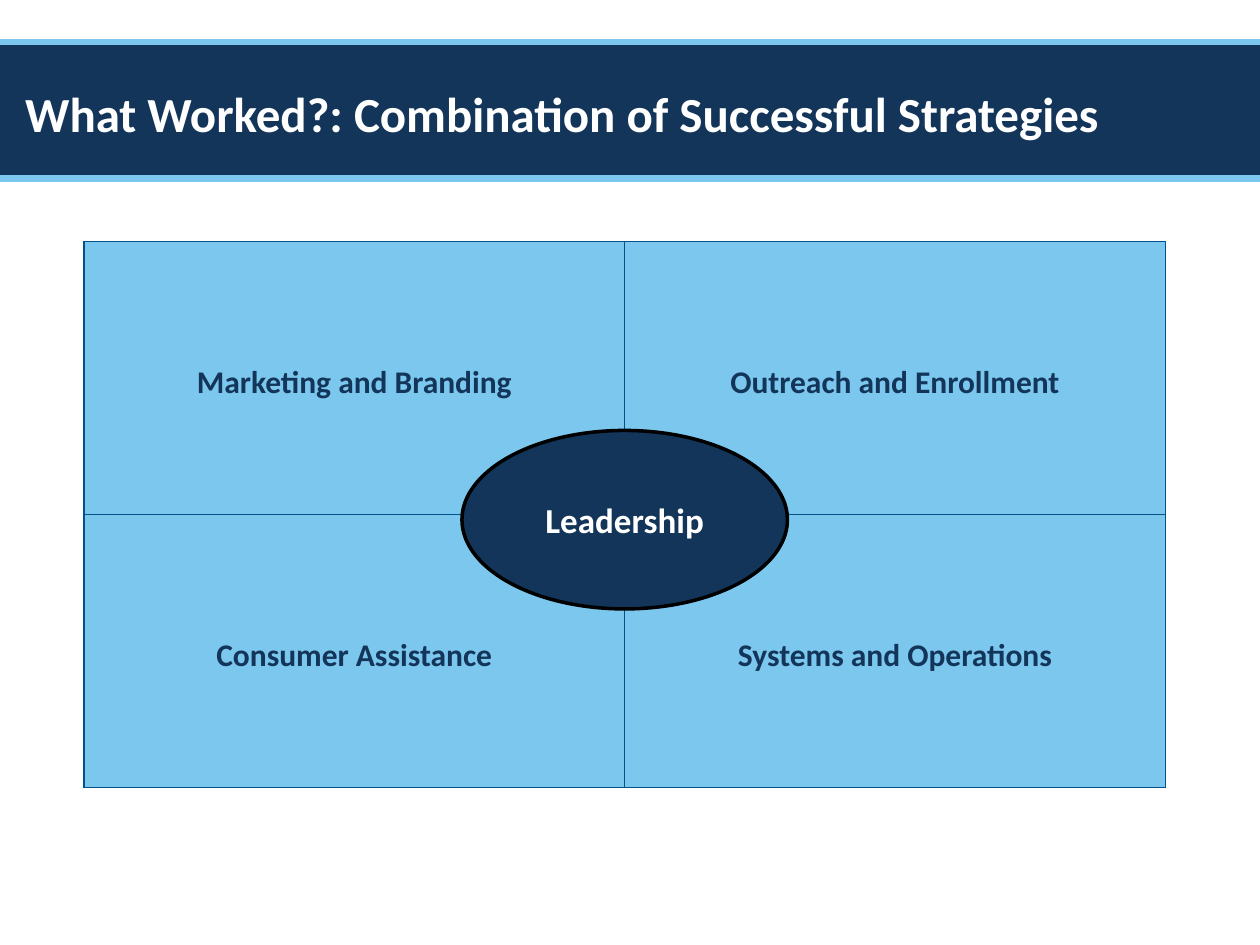
"""Build the slide on the combination of successful strategies."""
from lxml import etree
from pptx import Presentation
from pptx.dml.color import RGBColor
from pptx.enum.shapes import MSO_CONNECTOR, MSO_SHAPE
from pptx.enum.text import MSO_ANCHOR, PP_ALIGN
from pptx.oxml.ns import qn
from pptx.util import Pt

NAVY = RGBColor(0x13, 0x35, 0x59)
SKY = RGBColor(0x7B, 0xC7, 0xED)
BORDER = RGBColor(0x02, 0x51, 0x89)
WHITE = RGBColor(0xFF, 0xFF, 0xFF)
BLACK = RGBColor(0x00, 0x00, 0x00)
LEFT, CENTER = PP_ALIGN.LEFT, PP_ALIGN.CENTER
MIDDLE = MSO_ANCHOR.MIDDLE
STRAIGHT = MSO_CONNECTOR.STRAIGHT
RECTANGLE, OVAL = MSO_SHAPE.RECTANGLE, MSO_SHAPE.OVAL
STRATEGIES = [
    ["Marketing and Branding", "Outreach and Enrollment"],
    ["Consumer Assistance", "Systems and Operations"],
]


def write_text(text_frame, text, size=18, color=WHITE, align=CENTER):
    text_frame.word_wrap = True
    text_frame.vertical_anchor = MIDDLE
    paragraph = text_frame.paragraphs[0]
    paragraph.alignment = align
    run = paragraph.add_run()
    run.text = text
    run.font.name = "Calibri"
    run.font.size = Pt(size)
    run.font.bold = True
    run.font.color.rgb = color


def add_border(cell):
    properties = cell._tc.get_or_add_tcPr()
    for index, side in enumerate(("lnL", "lnR", "lnT", "lnB")):
        line = etree.Element(qn(f"a:{side}"), w=str(Pt(1)))
        fill = etree.SubElement(line, qn("a:solidFill"))
        etree.SubElement(fill, qn("a:srgbClr"), val=str(BORDER))
        properties.insert(index, line)


presentation = Presentation()
presentation.slide_width = Pt(720)
presentation.slide_height = Pt(540)
slide = presentation.slides.add_slide(presentation.slide_layouts[5])

band = slide.shapes.add_shape(RECTANGLE, Pt(0), Pt(24), Pt(720), Pt(78))
band.shadow.inherit = False
band.fill.solid()
band.fill.fore_color.rgb = NAVY
band.line.fill.background()

for top in (24, 102):
    rule = slide.shapes.add_connector(STRAIGHT, Pt(0), Pt(top), Pt(720), Pt(top))
    rule.line.color.rgb = SKY
    rule.line.width = Pt(3.7)
    etree.SubElement(rule._element.spPr, qn("a:effectLst"))

title = slide.shapes.title
title.left, title.top, title.width, title.height = Pt(7.2), Pt(28.8), Pt(705.6), Pt(72)
write_text(title.text_frame, "What Worked?: Combination of Successful Strategies", size=28, align=LEFT)
slide.shapes.element.append(title.element)

table = slide.shapes.add_table(2, 2, Pt(48), Pt(138), Pt(618), Pt(312)).table
for row, names in enumerate(STRATEGIES):
    for column, name in enumerate(names):
        cell = table.cell(row, column)
        cell.fill.solid()
        cell.fill.fore_color.rgb = SKY
        cell.margin_top = Pt(8.8)
        cell.vertical_anchor = MIDDLE
        write_text(cell.text_frame, name, color=NAVY)
        add_border(cell)

leadership = slide.shapes.add_shape(OVAL, Pt(264), Pt(246), Pt(186), Pt(102))
leadership.shadow.inherit = False
leadership.fill.solid()
leadership.fill.fore_color.rgb = NAVY
leadership.line.color.rgb = BLACK
leadership.line.width = Pt(2)
write_text(leadership.text_frame, "Leadership", size=20)

presentation.save("out.pptx")
